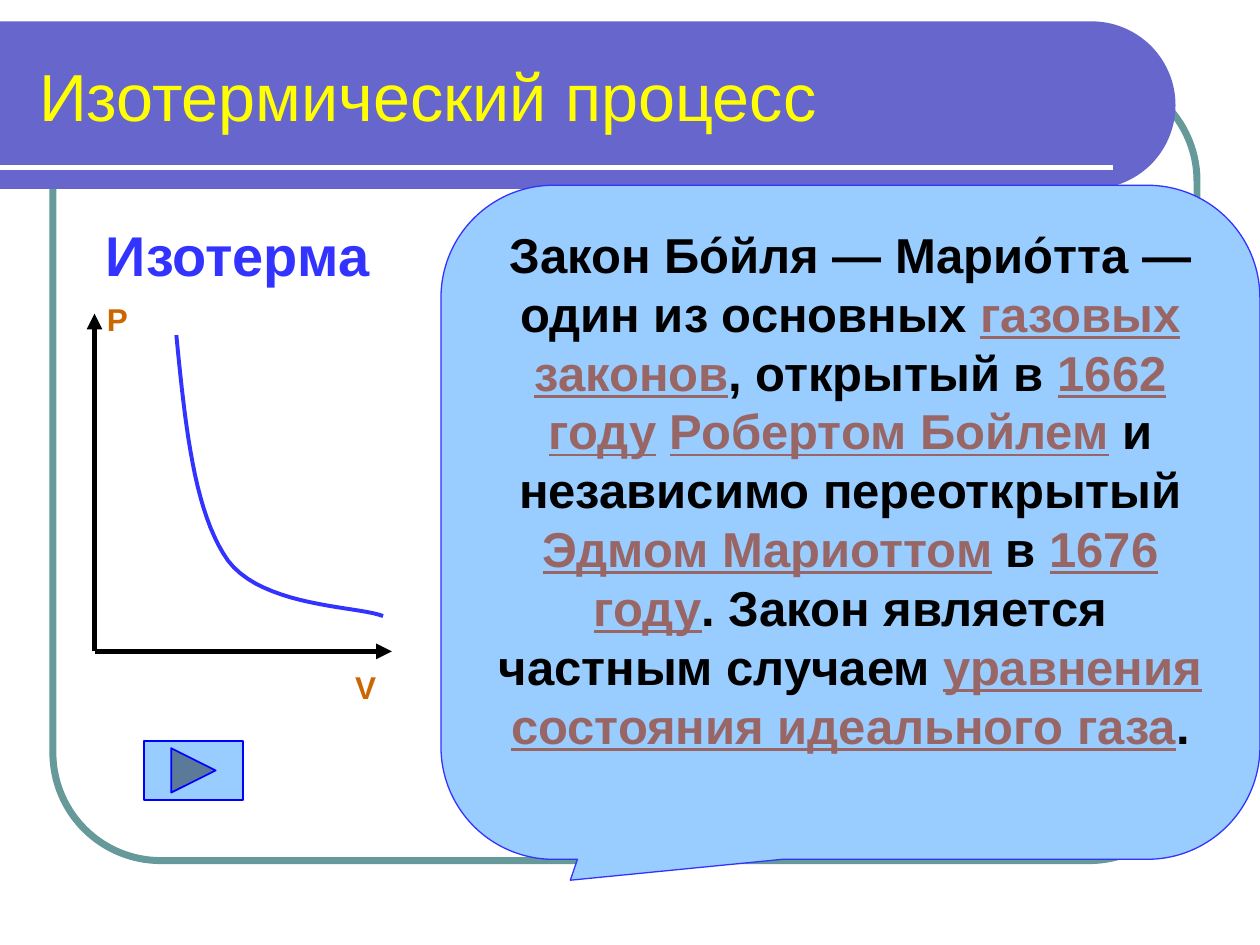
import math

import pptx
import pptx.util
import pptx.dml.color
import pptx.enum.shapes
import pptx.enum.text
import pptx.oxml
import pptx.oxml.ns

Inches = pptx.util.Inches
Pt = pptx.util.Pt
SHAPE = pptx.enum.shapes.MSO_SHAPE
ALIGN = pptx.enum.text.PP_ALIGN
ANCHOR = pptx.enum.text.MSO_ANCHOR

COLORS = {
    "frame": "669999", "band": "6666CC", "rule": "FFFFFF", "title": "FFFF00",
    "accent": "3333FF", "panel": "99CCFF", "text": "000000", "link": "996666",
    "label": "CC6600", "button": "0000FF",
}
LAW = [
    ("Закон Бо́йля — Марио́тта — один из основных ", "text"), ("газовых", "link"),
    (" ", "text"), ("законов", "link"),
    (", открытый в ", "text"), ("1662 году", "link"),
    (" ", "text"), ("Робертом Бойлем", "link"),
    (" и независимо переоткрытый ", "text"), ("Эдмом Мариоттом", "link"),
    (" в ", "text"), ("1676 году", "link"),
    (". Закон является частным случаем ", "text"),
    ("уравнения состояния идеального газа", "link"), (".", "text"),
]
ISOTHERM = [
    [(0.65, 0.17), (0.72, 0.88), (0.79, 1.58), (1.06, 1.96)],
    [(1.06, 1.96), (1.34, 2.33), (2.09, 2.32), (2.29, 2.4)],
]


def rgb(name):
    """Return the named colour."""
    return pptx.dml.color.RGBColor.from_string(COLORS[name])


def place(sp, x, y, w, h):
    """Move a shape to a box in inches."""
    box = {"left": x, "top": y, "width": w, "height": h}
    for key, value in box.items():
        setattr(sp, key, Inches(value))


def paint(sp, fill=None, line=None, weight=1):
    """Set fill and line, with no shadow."""
    sp.shadow.inherit = False
    if fill:
        sp.fill.solid()
        sp.fill.fore_color.rgb = rgb(fill)
    else:
        sp.fill.background()
    if line:
        sp.line.color.rgb = rgb(line)
        sp.line.width = Pt(weight)
    else:
        sp.line.fill.background()


def write(p, text, size, color, **extra):
    """Add a run to a paragraph."""
    r = p.add_run()
    r.text = text
    for key, value in {"name": "Arial", "size": Pt(size), **extra}.items():
        setattr(r.font, key, value)
    r.font.color.rgb = rgb(color)


def add_line(s, start, end, color, arrow=False):
    """Draw a straight 3 pt line, optionally with an arrow at its end."""
    points = [Inches(v) for v in (*start, *end)]
    c = s.shapes.add_connector(pptx.enum.shapes.MSO_CONNECTOR.STRAIGHT, *points)
    c.line.color.rgb = rgb(color)
    c.line.width = Pt(3)
    pr = c.element.spPr
    if arrow:
        ln = pr.find(pptx.oxml.ns.qn("a:ln"))
        ln.append(pptx.oxml.parse_xml(
            f'<a:tailEnd {pptx.oxml.ns.nsdecls("a")} type="triangle"/>'))
    pr.append(pptx.oxml.parse_xml(f'<a:effectLst {pptx.oxml.ns.nsdecls("a")}/>'))


def add_outline(s, points, close):
    """Build a freeform through points in inches."""
    points = [(Inches(x), Inches(y)) for x, y in points]
    builder = s.shapes.build_freeform(*points[0])
    builder.add_line_segments(points[1:], close=close)
    return builder.convert_to_shape()


def bezier(points, steps=20):
    """Return points along a cubic curve."""
    result = []
    for i in range(steps + 1):
        t = i / steps
        weights = [math.comb(3, k) * t**k * (1 - t)**(3 - k) for k in range(4)]
        result.append(tuple(sum(w * p[axis] for w, p in zip(weights, points))
                            for axis in (0, 1)))
    return result


def draw_frame(s, x, y, w, h):
    """Draw the rounded border of the slide."""
    sp = s.shapes.add_shape(SHAPE.ROUNDED_RECTANGLE, 0, 0, 0, 0)
    place(sp, x, y, w, h)
    sp.adjustments[0] = 0.137
    paint(sp, line="frame", weight=4)


def draw_header(s, x, y, w, h):
    """Draw the band with its round end, the rule and the title."""
    radius = h / 2
    angles = [math.radians(a) for a in range(-90, 91, 3)]
    arc = [(x + w - radius + radius * math.cos(a), y + radius + radius * math.sin(a))
           for a in angles]
    paint(add_outline(s, [(x, y), *arc, (x, y + h)], True), fill="band")
    add_line(s, (x, y + 1.16), (x + w - 0.5, y + 1.16), "rule")
    sp = s.shapes.title
    sp.element.getparent().append(sp.element)
    place(sp, x + 0.21, y + 0.08, 8.77, 1)
    sp.text_frame.vertical_anchor = ANCHOR.MIDDLE
    p = sp.text_frame.paragraphs[0]
    p.alignment = ALIGN.LEFT
    write(p, "Изотермический процесс", 38, "title")


def draw_heading(s, x, y, w, h):
    """Place the body heading above the graph."""
    sp = s.placeholders[1]
    sp.element.getparent().append(sp.element)
    place(sp, x, y, w, h)
    p = sp.text_frame.paragraphs[0]
    pr = p._p.get_or_add_pPr()
    for key, value in {"marL": Inches(0.74), "indent": 0}.items():
        pr.set(key, str(value))
    pr.append(pptx.oxml.parse_xml(f'<a:buNone {pptx.oxml.ns.nsdecls("a")}/>'))
    write(p, "Изотерма", 32, "accent", bold=True)


def draw_law(s, x, y, w, h):
    """Draw the callout with the wording of the law."""
    sp = s.shapes.add_shape(SHAPE.ROUNDED_RECTANGULAR_CALLOUT, 0, 0, 0, 0)
    place(sp, x, y, w, h)
    for i, value in enumerate((-0.342, 0.531, 0.167)):
        sp.adjustments[i] = value
    paint(sp, "panel", "accent", 0.75)
    tf = sp.text_frame
    tf.word_wrap = True
    tf.vertical_anchor = ANCHOR.TOP
    p = tf.paragraphs[0]
    p.alignment = ALIGN.CENTER
    for text, color in LAW:
        write(p, text, 28, color, bold=True, underline=color == "link")


def draw_graph(s, x, y, w, h):
    """Draw the axes, their labels and the isotherm."""
    origin = (x, y + h)
    for end in ((x, y), (x + w, y + h)):
        add_line(s, origin, end, "text", arrow=True)
    points = [p for part in ISOTHERM for p in bezier(part)]
    curve = add_outline(s, [(x + px, y + py) for px, py in points], False)
    paint(curve, line="accent", weight=2.25)
    labels = [("V", x + 1.97, y + h + 0.08, 1.02), ("P", x, y - 0.16, 0.63)]
    for text, left, top, width in labels:
        sp = s.shapes.add_textbox(0, 0, 0, 0)
        place(sp, left, top, width, 0.4)
        sp.text_frame.word_wrap = True
        write(sp.text_frame.paragraphs[0], text, 18, "label", bold=True)


def draw_button(s, x, y, w, h):
    """Draw the forward button."""
    sp = s.shapes.add_shape(SHAPE.ACTION_BUTTON_FORWARD_OR_NEXT, 0, 0, 0, 0)
    place(sp, x, y, w, h)
    paint(sp, "panel", "button")


def main():
    """Build and save the slide."""
    prs = pptx.Presentation()
    prs.slide_width, prs.slide_height = Inches(10), Inches(7.5)
    s = prs.slides.add_slide(prs.slide_layouts[1])
    draw_frame(s, 0.42, 0.58, 9.08, 6.25)
    draw_header(s, 0, 0.17, 9.33, 1.33)
    draw_heading(s, 0, 1.7, 3.39, 4.83)
    draw_law(s, 3.5, 1.47, 6.5, 5.35)
    draw_graph(s, 0.75, 2.49, 2.36, 2.68)
    draw_button(s, 1.14, 5.88, 0.79, 0.47)
    prs.save("out.pptx")


if __name__ == "__main__":
    main()
